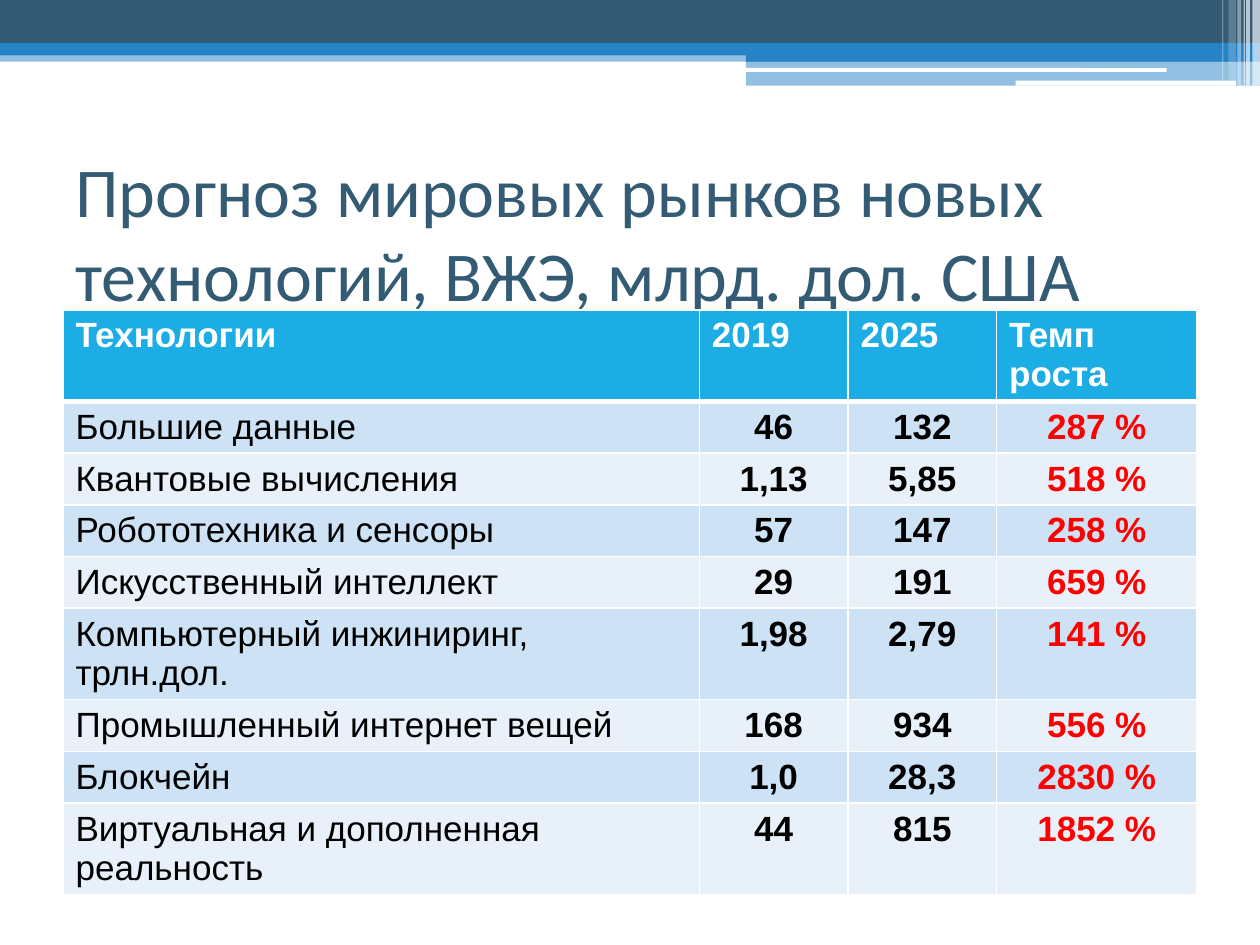
from typing import NamedTuple

from lxml.etree import SubElement
from pptx import Presentation
from pptx.dml.color import RGBColor
from pptx.enum.shapes import MSO_SHAPE
from pptx.enum.text import MSO_ANCHOR, PP_ALIGN
from pptx.oxml.ns import qn
from pptx.util import Inches, Pt

NAVY, BLUE, WHITE = "335B74", "2683C6", "FFFFFF"
HEAD, BANDS = "1CADE4", ("CDE3F5", "E8F1FA")
BLACK, RED = "000000", "FF0000"


class Bar(NamedTuple):
    left: float
    top: float
    width: float
    height: float
    color: str
    alpha: int = 100
    kind: MSO_SHAPE = MSO_SHAPE.RECTANGLE


ROUND = MSO_SHAPE.ROUNDED_RECTANGLE
BARS = [
    Bar(0, 0.4, 10, 0.09, BLUE, 50),
    Bar(0, 0, 10, 0.34, NAVY),
    Bar(0, 0.34, 10, 0.1, BLUE),
    Bar(5.92, 0.39, 4.08, 0.1, BLUE),
    Bar(5.92, 0.48, 4.08, 0.2, BLUE, 50),
    Bar(5.91, 0.54, 3.35, 0.03, WHITE, kind=ROUND),
    Bar(8.06, 0.64, 1.75, 0.04, WHITE, kind=ROUND),
    Bar(9.94, 0, 0.06, 0.68, WHITE, 65),
    Bar(9.89, 0, 0.03, 0.68, WHITE, 65),
    Bar(9.87, 0, 0.01, 0.68, WHITE, 60),
    Bar(9.82, 0, 0.03, 0.68, WHITE, 40),
    Bar(9.75, 0, 0.06, 0.64, WHITE, 20),
    Bar(9.7, 0, 0.01, 0.64, WHITE, 30),
]

WIDTHS = (5.05, 1.18, 1.18, 1.59)
ROW = 0.41
ROWS = [
    ("Технологии", "2019", "2025", "Темп роста"),
    ("Большие данные", "46", "132", "287 %"),
    ("Квантовые вычисления", "1,13", "5,85", "518 %"),
    ("Робототехника и сенсоры", "57", "147", "258 %"),
    ("Искусственный интеллект", "29", "191", "659 %"),
    ("Компьютерный инжиниринг, трлн.дол.", "1,98", "2,79", "141 %"),
    ("Промышленный интернет вещей", "168", "934", "556 %"),
    ("Блокчейн", "1,0", "28,3", "2830 %"),
    ("Виртуальная и дополненная реальность", "44", "815", "1852 %"),
]


def paint(fill, color: str, alpha: int = 100) -> None:
    fill.solid()
    fill.fore_color.rgb = RGBColor.from_string(color)
    if alpha < 100:
        tint = fill._xPr.find(qn("a:solidFill"))[0]
        SubElement(tint, qn("a:alpha"), val=str(alpha * 1000))


def write(frame, text: str, *, size: int = 20, font: str = "Arial",
          color: str = BLACK, bold: bool = False, align=PP_ALIGN.LEFT) -> None:
    line = frame.paragraphs[0]
    line.alignment = align
    run = line.add_run()
    run.text = text
    run.font.size, run.font.name, run.font.bold = Pt(size), font, bold
    paint(run.font.fill, color)


def draw_bar(slide, bar: Bar) -> None:
    box = [Inches(x) for x in bar[:4]]
    shape = slide.shapes.add_shape(bar.kind, *box)
    shape.shadow.inherit = False
    shape.line.fill.background()
    paint(shape.fill, bar.color, bar.alpha)


def edge(cell, **widths: int) -> None:
    """Give a cell white borders, with widths in points by side."""
    props = cell._tc.get_or_add_tcPr()
    for side, width in widths.items():
        line = SubElement(props, qn(f"a:ln{side}"), w=str(Pt(width)))
        fill = SubElement(line, qn("a:solidFill"))
        SubElement(fill, qn("a:srgbClr"), val=WHITE)


def draw_title(slide, text: str) -> None:
    box = slide.shapes.add_textbox(
        Inches(0.5), Inches(1.25), Inches(9), Inches(1.17))
    frame = box.text_frame
    frame.word_wrap = True
    frame.vertical_anchor = MSO_ANCHOR.MIDDLE
    write(frame, text, size=40, font="Calibri", color=NAVY)


def draw_table(slide) -> None:
    table = slide.shapes.add_table(
        len(ROWS), len(WIDTHS), Inches(0.5), Inches(2.46),
        Inches(sum(WIDTHS)), Inches(ROW * len(ROWS))).table
    for col, width in zip(table.columns, WIDTHS):
        col.width = Inches(width)
    for r, row in enumerate(ROWS):
        table.rows[r].height = Inches(ROW)
        for c, text in enumerate(row):
            cell = table.cell(r, c)
            cell.margin_bottom = Inches(0.01)
            edge(cell, L=1, R=1, T=3 if r == 1 else 1, B=3 if r == 0 else 1)
            if r == 0:
                paint(cell.fill, HEAD)
                write(cell.text_frame, text, color=WHITE, bold=True)
                continue
            paint(cell.fill, BANDS[(r - 1) % 2])
            write(cell.text_frame, text, bold=c > 0,
                  color=RED if c == 3 else BLACK,
                  align=PP_ALIGN.CENTER if c else PP_ALIGN.LEFT)


def main() -> None:
    deck = Presentation()
    deck.slide_width, deck.slide_height = Inches(10), Inches(7.5)
    slide = deck.slides.add_slide(deck.slide_layouts[6])
    paint(slide.background.fill, WHITE)
    for bar in BARS:
        draw_bar(slide, bar)
    draw_title(slide, "Прогноз мировых рынков новых технологий, "
                      "ВЖЭ, млрд. дол. США")
    draw_table(slide)
    deck.save("out.pptx")


if __name__ == "__main__":
    main()
